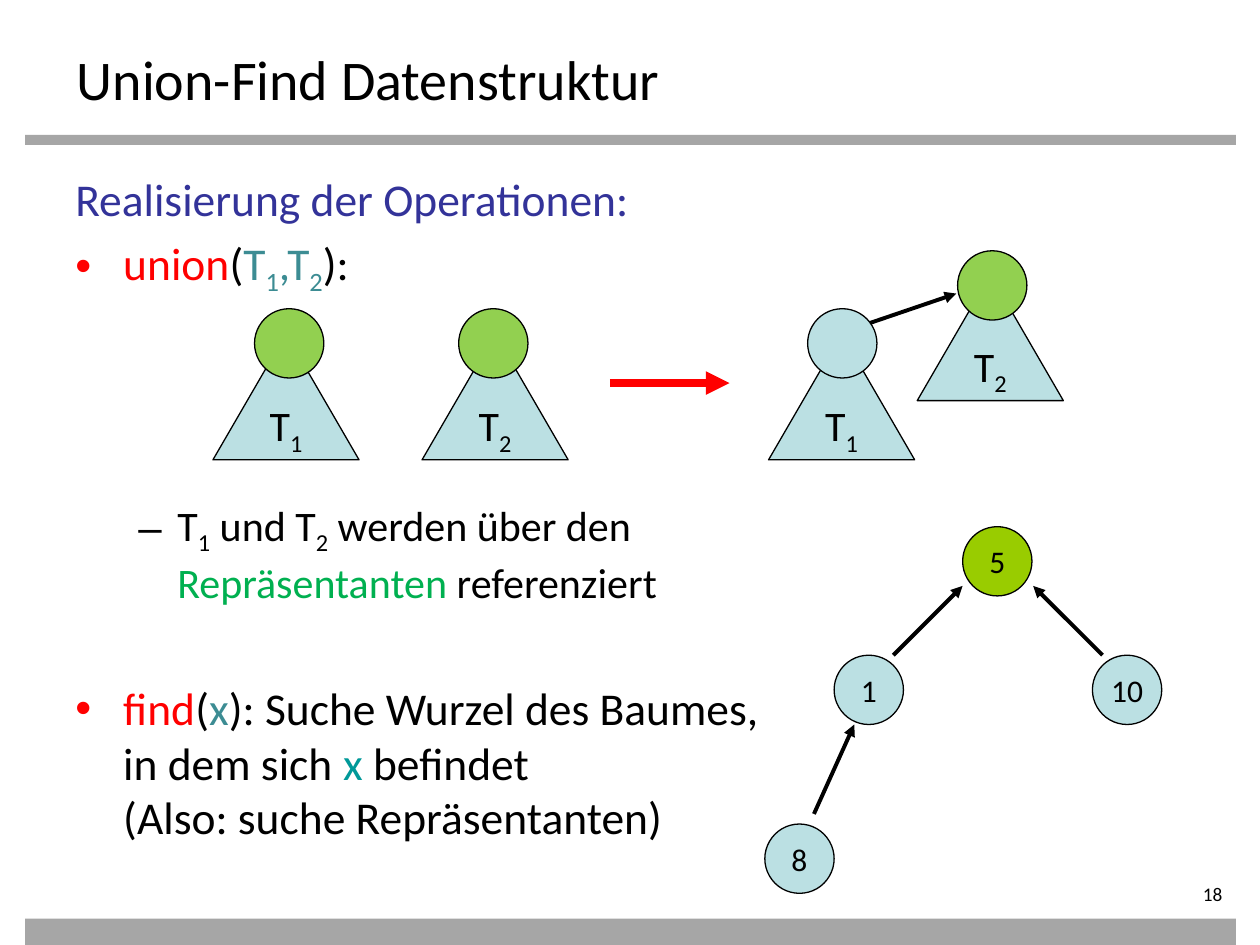
from lxml import etree
from pptx import Presentation
from pptx.dml.color import RGBColor
from pptx.enum.shapes import MSO_CONNECTOR, MSO_SHAPE
from pptx.enum.text import MSO_ANCHOR, PP_ALIGN
from pptx.oxml.ns import qn
from pptx.util import Inches, Pt

FONT = "Calibri"
BLACK = RGBColor(0x00, 0x00, 0x00)
GRAY = RGBColor(0xA6, 0xA6, 0xA6)
INDIGO = RGBColor(0x33, 0x33, 0x99)
RED = RGBColor(0xFF, 0x00, 0x00)
TEAL = RGBColor(0x3C, 0x8C, 0x93)
BRIGHT_TEAL = RGBColor(0x00, 0x99, 0x99)
GREEN = RGBColor(0x00, 0xB0, 0x50)
PALE_BLUE = RGBColor(0xBB, 0xE0, 0xE3)
ROOT_GREEN = RGBColor(0x92, 0xD0, 0x50)
LIME = RGBColor(0x99, 0xCC, 0x00)

RECTANGLE, TRIANGLE, OVAL = MSO_SHAPE.RECTANGLE, MSO_SHAPE.ISOSCELES_TRIANGLE, MSO_SHAPE.OVAL
STRAIGHT = MSO_CONNECTOR.STRAIGHT
LEFT, CENTER, RIGHT = PP_ALIGN.LEFT, PP_ALIGN.CENTER, PP_ALIGN.RIGHT
TOP, MIDDLE = MSO_ANCHOR.TOP, MSO_ANCHOR.MIDDLE

TITLE = "Union-Find Datenstruktur"
PAGE_NUMBER = "18"
BARS = [(1.07, 0.08), (7.29, 0.21)]  # top, height

# size, bullet, left margin, hanging indent, space before, runs (text, colour, subscript)
BODY = [
    (26, None, 0.38, 0.38, 0, [("Realisierung der Operationen:", INDIGO, False)]),
    (26, "•", 0.38, 0.38, 5.2, [
        ("union", RED, False), ("(", BLACK, False), ("T", TEAL, False), ("1", TEAL, True),
        (",T", TEAL, False), ("2", TEAL, True), ("):", BLACK, False)]),
    (24, "–", 0.81, 0.31, 115.5, [
        ("T", BLACK, False), ("1", BLACK, True), (" und T", BLACK, False), ("2", BLACK, True),
        (" werden über den\n", BLACK, False), ("Repräsentanten", GREEN, False),
        (" referenziert", BLACK, False)]),
    (26, "•", 0.38, 0.38, 42, [
        ("find", RED, False), ("(", BLACK, False), ("x", TEAL, False),
        ("): Suche Wurzel des Baumes,\nin dem sich ", BLACK, False), ("x", BRIGHT_TEAL, False),
        (" befindet\n(Also: suche Repräsentanten)", BLACK, False)]),
]

TREE_SIZE = (1.16, 1)
TREES = [(1.69, 2.65, "1"), (3.35, 2.65, "2"), (6.1, 2.65, "1"), (7.28, 2.18, "2")]
NODE_SIZE = (0.55, 0.55)
NODES = [
    (2.02, 2.45, ROOT_GREEN, ""), (3.64, 2.45, ROOT_GREEN, ""),
    (6.41, 2.45, PALE_BLUE, ""), (7.6, 1.99, ROOT_GREEN, ""),
    (7.64, 4.18, LIME, "5"), (6.07, 6.54, PALE_BLUE, "8"),
    (6.62, 5.2, PALE_BLUE, "1"), (8.67, 5.2, PALE_BLUE, "10"),
]
ARROWS = [  # from, to, colour, width
    ((6.65, 2.65), (7.59, 2.33), BLACK, 2.25),
    ((4.84, 3.04), (5.79, 3.04), RED, 4.5),
    ((7.09, 5.2), (7.64, 4.65), BLACK, 2.25),
    ((8.75, 5.2), (8.2, 4.65), BLACK, 2.25),
    ((6.46, 6.46), (6.78, 5.75), BLACK, 2.25),
]


def write_runs(paragraph, runs, size, align=LEFT):
    """Fill a paragraph with (text, colour, subscript) runs; a newline breaks the line."""
    paragraph.alignment = align
    for text, color, subscript in runs:
        for index, piece in enumerate(text.split("\n")):
            if index:
                paragraph.add_line_break()
            if not piece:
                continue
            run = paragraph.add_run()
            run.text = piece
            run.font.name, run.font.size = FONT, Pt(size)
            run.font.color.rgb = color
            if subscript:
                run.font._element.set("baseline", "-25000")


def set_indent(paragraph, bullet, margin, hanging):
    properties = paragraph._p.get_or_add_pPr()
    properties.set("marL", str(Inches(margin)))
    properties.set("indent", str(-Inches(hanging)))
    if bullet:
        font = etree.SubElement(properties, qn("a:buFont"))
        font.set("typeface", "Arial")
        etree.SubElement(properties, qn("a:buChar")).set("char", bullet)
    else:
        etree.SubElement(properties, qn("a:buNone"))


def add_shape(slide, kind, position, size, fill, outlined=True):
    shape = slide.shapes.add_shape(kind, *map(Inches, (*position, *size)))
    shape.shadow.inherit = False
    shape.fill.solid()
    shape.fill.fore_color.rgb = fill
    if outlined:
        shape.line.color.rgb = BLACK
        shape.line.width = Pt(0.75)
    else:
        shape.line.fill.background()
    return shape


def label_shape(shape, runs, size):
    frame = shape.text_frame
    frame.word_wrap = False
    frame.vertical_anchor = MIDDLE
    write_runs(frame.paragraphs[0], runs, size, CENTER)


def add_arrow(slide, start, end, color, width):
    arrow = slide.shapes.add_connector(STRAIGHT, *map(Inches, (*start, *end)))
    arrow.line.color.rgb = color
    arrow.line.width = Pt(width)
    etree.SubElement(arrow.line._get_or_add_ln(), qn("a:tailEnd")).set("type", "triangle")
    etree.SubElement(arrow._element.spPr, qn("a:effectLst"))


def add_title(slide):
    title = slide.shapes.title
    title.left, title.top, title.width, title.height = map(Inches, (0.51, 0.3, 9, 0.55))
    title.text_frame.vertical_anchor = TOP
    write_runs(title.text_frame.paragraphs[0], [(TITLE, BLACK, False)], 32)


def add_body(slide):
    frame = slide.shapes.add_textbox(*map(Inches, (0.5, 1.31, 9.3, 5.43))).text_frame
    frame.word_wrap = True
    for index, (size, bullet, margin, hanging, space, runs) in enumerate(BODY):
        paragraph = frame.add_paragraph() if index else frame.paragraphs[0]
        set_indent(paragraph, bullet, margin, hanging)
        if space:
            paragraph.space_before = Pt(space)
        write_runs(paragraph, runs, size)


def add_page_number(slide):
    frame = slide.shapes.add_textbox(*map(Inches, (8.7, 7, 1.1, 0.22))).text_frame
    frame.word_wrap = True
    frame.margin_left = frame.margin_top = frame.margin_bottom = 0
    write_runs(frame.paragraphs[0], [(PAGE_NUMBER, BLACK, False)], 11, RIGHT)


def main():
    presentation = Presentation()
    presentation.slide_width, presentation.slide_height = Inches(10), Inches(7.5)
    slide = presentation.slides.add_slide(presentation.slide_layouts[5])
    for top, height in BARS:
        add_shape(slide, RECTANGLE, (0.2, top), (9.61, height), GRAY, outlined=False)
    add_page_number(slide)
    add_title(slide)
    add_body(slide)
    for left, top, number in TREES:
        tree = add_shape(slide, TRIANGLE, (left, top), TREE_SIZE, PALE_BLUE)
        label_shape(tree, [("T", BLACK, False), (number, BLACK, True)], 24)
    for arrow in ARROWS:
        add_arrow(slide, *arrow)
    for left, top, fill, key in NODES:
        node = add_shape(slide, OVAL, (left, top), NODE_SIZE, fill)
        if key:
            label_shape(node, [(key, BLACK, False)], 18)
    presentation.save("out.pptx")


if __name__ == "__main__":
    main()
